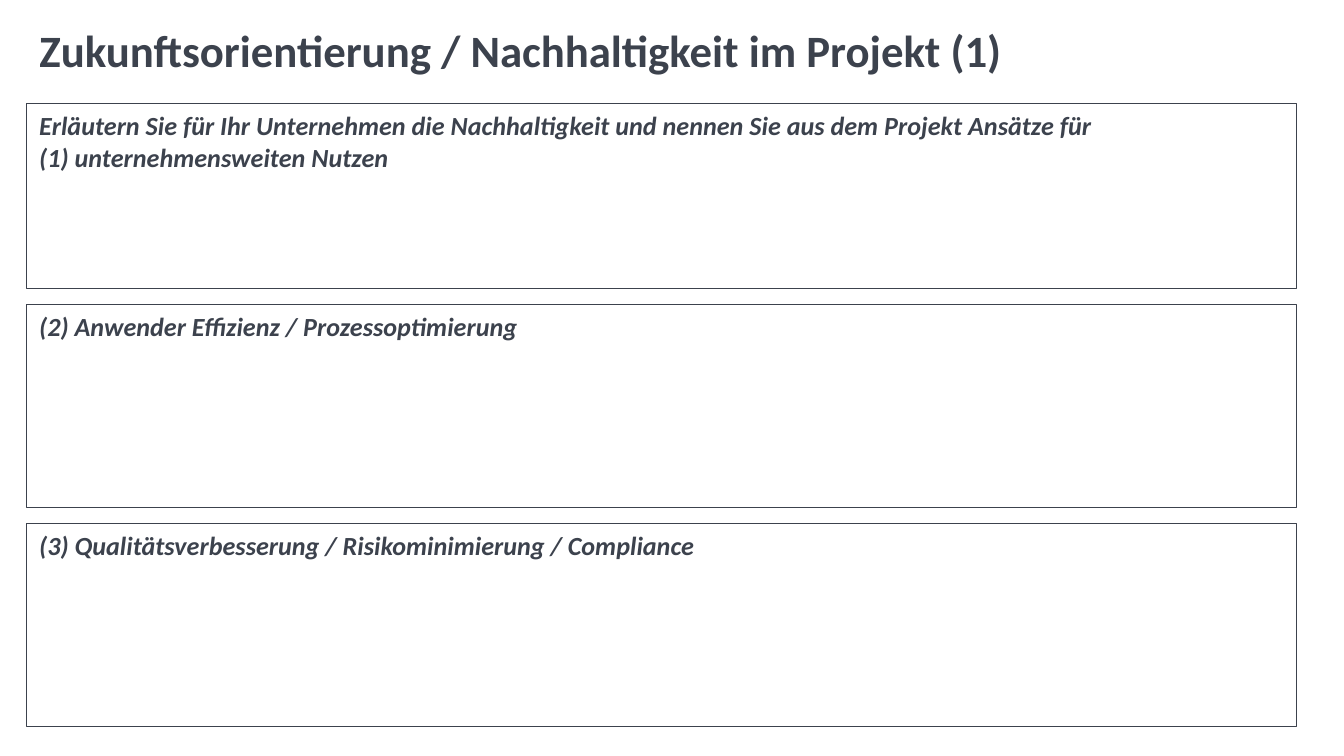
from pptx import Presentation
from pptx.dml.color import RGBColor
from pptx.enum.shapes import MSO_SHAPE
from pptx.enum.text import MSO_ANCHOR, MSO_AUTO_SIZE, PP_ALIGN
from pptx.util import Pt

RECTANGLE = MSO_SHAPE.RECTANGLE
TOP, MIDDLE = MSO_ANCHOR.TOP, MSO_ANCHOR.MIDDLE
LEFT = PP_ALIGN.LEFT
FIXED = MSO_AUTO_SIZE.NONE

# Content: heading, then each answer field as (height in px, lines)
HEADING = "Zukunftsorientierung / Nachhaltigkeit im Projekt (1)"
ANSWER_FIELDS = [
    (185, ["Erläutern Sie für Ihr Unternehmen die Nachhaltigkeit und nennen Sie "
           "aus dem Projekt Ansätze für",
           "(1) unternehmensweiten Nutzen"]),
    (203, ["(2) Anwender Effizienz / Prozessoptimierung"]),
    (203, ["(3) Qualitätsverbesserung / Risikominimierung / Compliance"]),
]

THEME = {
    "ink": RGBColor(0x3C, 0x42, 0x4D),
    "border": Pt(0.25),
    "heading": {"name": "Calibri", "size": Pt(24), "bold": True},
    "prompt": {"name": "Calibri", "size": Pt(14), "bold": True, "italic": True},
}

# Layout in px
SLIDE_WIDTH, SLIDE_HEIGHT = 1344, 756
MARGIN, FIELD_WIDTH = 26, 1270
HEADING_TOP, HEADING_WIDTH, HEADING_HEIGHT = 14, 1079, 71
FIRST_FIELD_TOP, FIELD_GAP = 103, 16


def px(length):
    return round(length * 914400 / 134.4)


def write(frame, lines, style, anchor):
    settings = {"word_wrap": True, "auto_size": FIXED, "vertical_anchor": anchor}
    for key, value in settings.items():
        setattr(frame, key, value)
    frame.text = "\n".join(lines)
    for paragraph in frame.paragraphs:
        paragraph.alignment = LEFT
        for key, value in THEME[style].items():
            setattr(paragraph.font, key, value)
        paragraph.font.color.rgb = THEME["ink"]


deck = Presentation()
deck.slide_width, deck.slide_height = px(SLIDE_WIDTH), px(SLIDE_HEIGHT)
slide = deck.slides.add_slide(deck.slide_layouts[5])

# Heading
heading = slide.shapes.title
heading.left, heading.top = px(MARGIN), px(HEADING_TOP)
heading.width, heading.height = px(HEADING_WIDTH), px(HEADING_HEIGHT)
write(heading.text_frame, [HEADING], "heading", MIDDLE)

# Answer fields, stacked with equal gaps
top = FIRST_FIELD_TOP
for height, prompt in ANSWER_FIELDS:
    field = slide.shapes.add_shape(
        RECTANGLE, px(MARGIN), px(top), px(FIELD_WIDTH), px(height))
    field.shadow.inherit = False
    field.fill.background()
    field.line.color.rgb = THEME["ink"]
    field.line.width = THEME["border"]
    write(field.text_frame, prompt, "prompt", TOP)
    top += height + FIELD_GAP

deck.save("out.pptx")
